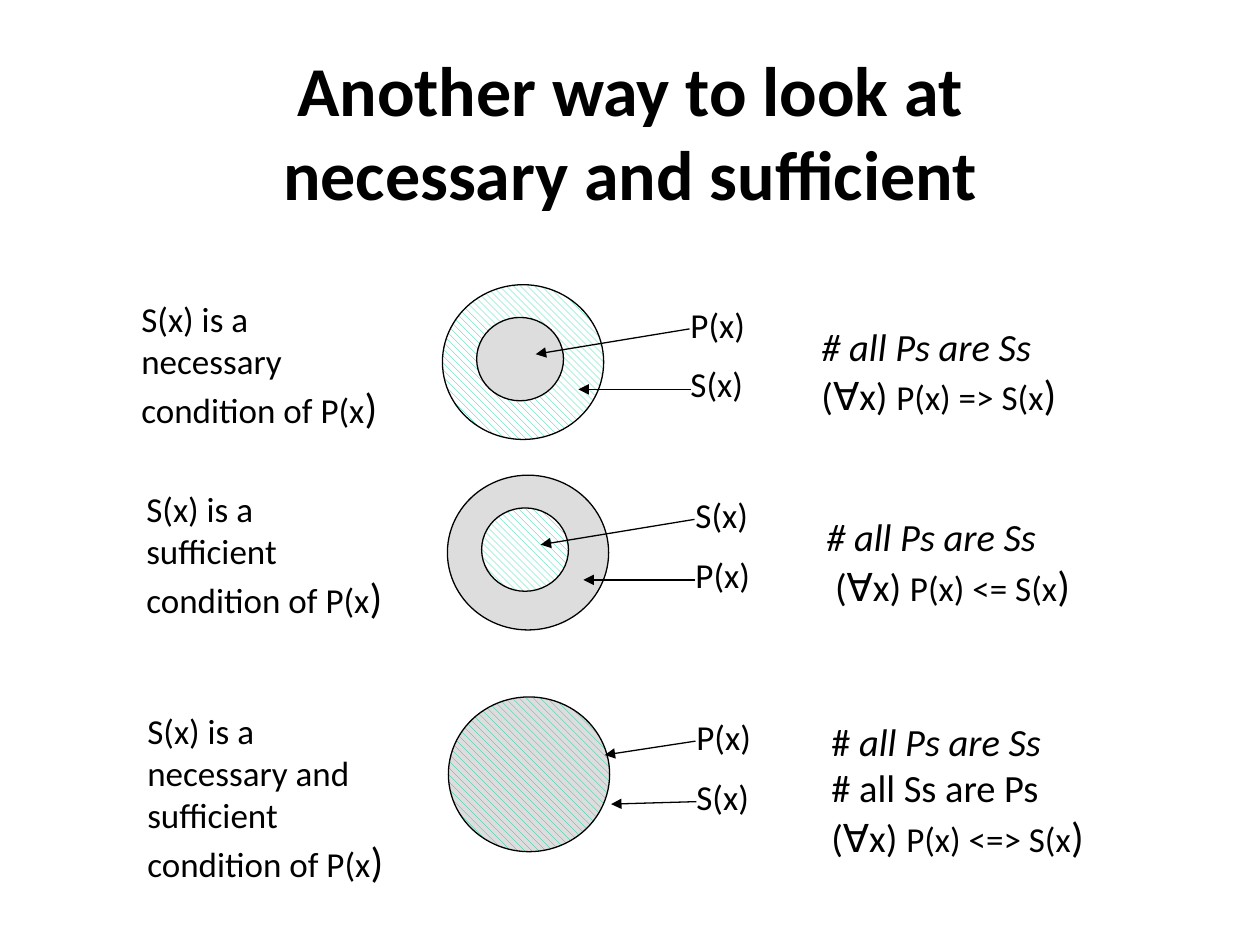
from dataclasses import dataclass

from lxml import etree
from pptx import Presentation
from pptx.dml.color import RGBColor
from pptx.enum.dml import MSO_PATTERN
from pptx.enum.shapes import MSO_CONNECTOR, MSO_SHAPE
from pptx.enum.text import MSO_ANCHOR, MSO_AUTO_SIZE, PP_ALIGN
from pptx.oxml.ns import qn
from pptx.util import Cm, Pt

ELLIPSE = MSO_SHAPE.OVAL
STRAIGHT = MSO_CONNECTOR.STRAIGHT
HATCH = MSO_PATTERN.WIDE_DOWNWARD_DIAGONAL
CENTER = PP_ALIGN.CENTER
MIDDLE = MSO_ANCHOR.MIDDLE
GROW = MSO_AUTO_SIZE.SHAPE_TO_FIT_TEXT

COLORS = {"ink": "000000", "paper": "FFFFFF", "gray": "DDDDDD", "green": "00CC99"}
FONT = "Calibri"
TITLE_SIZE, BODY_SIZE, COMMENT_SIZE, BRACKET_SIZE = 40, 20, 22, 24

S_FILL = ("green", "paper")
P_FILL = ("gray",)
BOTH_FILL = ("green", "gray")


@dataclass
class Relation:
    """One row: position of the outer circle, its wording and its fills."""
    left: float
    top: float
    condition: str
    condition_height: float
    fills: list
    labels: str
    arrow_tips: list
    formula_box: tuple
    comments: list
    quantifier: str
    formula: str


NESTED_TIPS = [(1.88, 1.4), (2.74, 2.11)]
RELATIONS = [
    Relation(8.92, 5.74, "necessary", 3, [S_FILL, P_FILL], "P(x)\nS(x)",
             NESTED_TIPS, (7.39, 0.64, 6.48, 2.24),
             [[("# all Ps are Ss", True)]], "(∀x) ", "P(x) => S(x"),
    Relation(9.02, 9.58, "sufficient", 3, [P_FILL, S_FILL], "S(x)\nP(x)",
             NESTED_TIPS, (7.39, 0.64, 6.22, 2.24),
             [[("# all Ps are Ss", True)]], " (∀x) ", "P(x) <= S(x"),
    Relation(9.04, 14.05, "necessary and sufficient", 3.81, [BOTH_FILL], "P(x)\nS(x)",
             [(3.15, 1.17), (3.28, 2.16)], (7.47, 0.3, 7.26, 3.18),
             [[("#", False), (" all Ps are Ss", True)], [("# all Ss are Ps", False)]],
             "(∀x) ", "P(x) <=> S(x"),
]
CIRCLE_BOXES = [(0, 0, 3.25, 3.12), (0.69, 0.66, 1.75, 1.68)]
ARROW_STARTS = [(4.98, 0.89), (5, 2.11)]


def color(name):
    return RGBColor.from_string(COLORS[name])


class SlideBuilder:
    def __init__(self, slide):
        self.slide = slide
        self.shapes = slide.shapes

    def start_group(self):
        self.shapes = self.slide.shapes.add_group_shape().shapes

    def style_run(self, run, size, italic=False, bold=False):
        font = run.font
        font.name, font.size = FONT, Pt(size)
        font.italic, font.bold = italic, bold
        font.color.rgb = color("ink")

    def style_line(self, line):
        line.color.rgb = color("ink")
        line.width = Pt(0.75)

    def text_box(self, box):
        frame = self.shapes.add_textbox(*map(Cm, box)).text_frame
        frame.word_wrap = True
        return frame

    def title(self, text, box):
        frame = self.text_box(box)
        frame.vertical_anchor = MIDDLE
        paragraph = frame.paragraphs[0]
        paragraph.text = text
        paragraph.alignment = CENTER
        for run in paragraph.runs:
            self.style_run(run, TITLE_SIZE, bold=True)

    def labels(self, text, box):
        frame = self.text_box(box)
        frame.auto_size = GROW
        frame.text = text
        for index, paragraph in enumerate(frame.paragraphs):
            paragraph.space_before = Pt(10 if index else 0)
            self.style_run(paragraph.runs[0], BODY_SIZE)

    def rich_text(self, lines, box):
        """Write lines of (text, size, italic) runs into one paragraph."""
        frame = self.text_box(box)
        frame.auto_size = GROW
        paragraph = frame.paragraphs[0]
        for index, line in enumerate(lines):
            if index:
                paragraph.add_line_break()
            for text, size, italic in line:
                run = paragraph.add_run()
                run.text = text
                self.style_run(run, size, italic)

    def circle(self, box, fill_colors):
        """Fill plainly with one colour, or hatch the first over the second."""
        shape = self.shapes.add_shape(ELLIPSE, *map(Cm, box))
        shape.shadow.inherit = False
        if len(fill_colors) == 1:
            shape.fill.solid()
            shape.fill.fore_color.rgb = color(fill_colors[0])
        else:
            shape.fill.patterned()
            shape.fill.pattern = HATCH
            shape.fill.fore_color.rgb = color(fill_colors[0])
            shape.fill.back_color.rgb = color(fill_colors[1])
        self.style_line(shape.line)

    def arrow(self, start, end):
        connector = self.shapes.add_connector(STRAIGHT, *map(Cm, start + end))
        self.style_line(connector.line)
        properties = connector.element.spPr
        etree.SubElement(properties.find(qn("a:ln")), qn("a:tailEnd"), type="triangle")
        etree.SubElement(properties, qn("a:effectLst"))

    def relation(self, row):
        def place(box):
            return (row.left + box[0], row.top + box[1]) + tuple(box[2:])

        self.start_group()
        for box, fill_colors in zip(CIRCLE_BOXES, row.fills):
            self.circle(place(box), fill_colors)
        self.labels(row.labels, place((4.75, 0.25, 2.62, 2.36)))
        for start, tip in zip(ARROW_STARTS, row.arrow_tips):
            self.arrow(place(start), place(tip))

        bracket = (")", BRACKET_SIZE, False)
        condition = f"S(x) is a {row.condition} condition of P(x"
        self.rich_text([[(condition, BODY_SIZE, False), bracket]],
                       place((-6.32, 0.13, 5.38, row.condition_height)))
        comments = [[(text, COMMENT_SIZE, italic) for text, italic in line]
                    for line in row.comments]
        formula = [(row.quantifier, COMMENT_SIZE, False),
                   (row.formula, BODY_SIZE, False), bracket]
        self.rich_text(comments + [formula], place(row.formula_box))


def main():
    presentation = Presentation()
    presentation.slide_width, presentation.slide_height = Cm(25.4), Cm(19.05)
    slide = presentation.slides.add_slide(presentation.slide_layouts[6])
    builder = SlideBuilder(slide)
    builder.title("Another way to look at\vnecessary and sufficient",
                  (1.9, 0.85, 21.6, 3.55))
    for row in RELATIONS:
        builder.relation(row)
    presentation.save("out.pptx")


if __name__ == "__main__":
    main()
